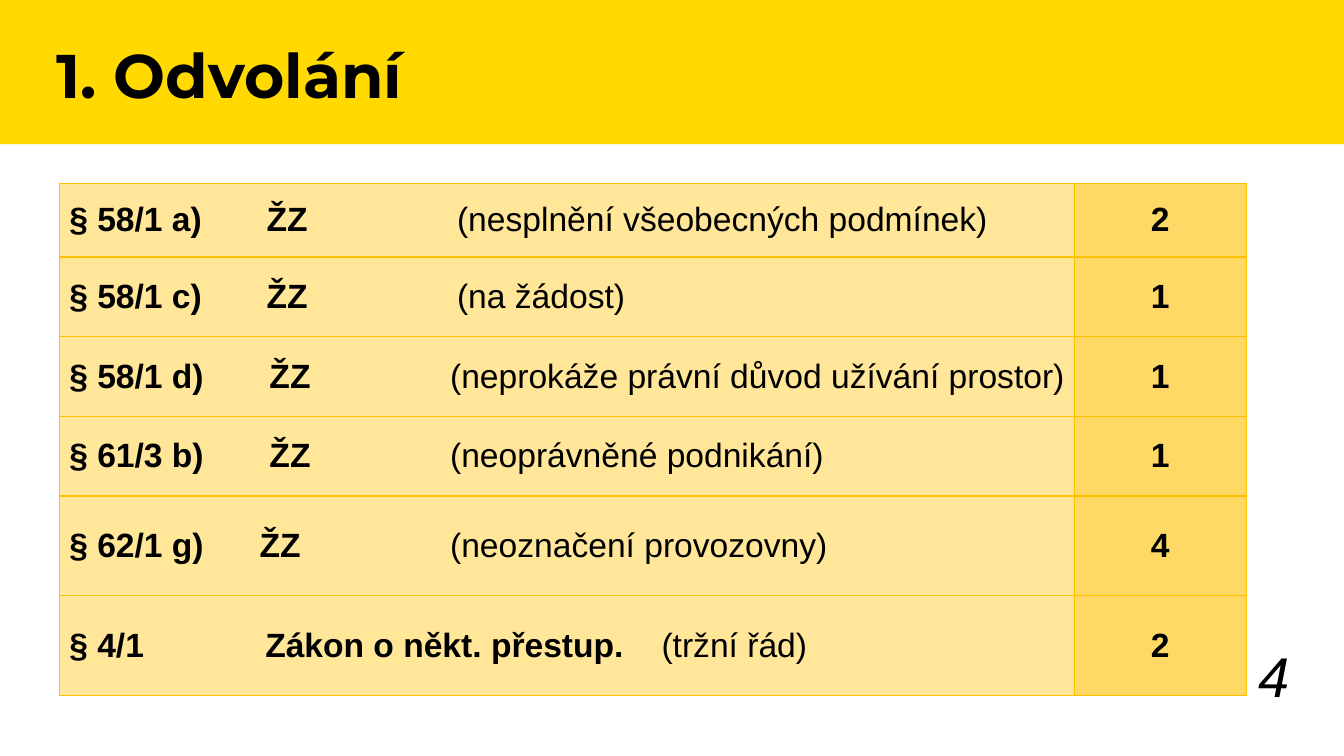
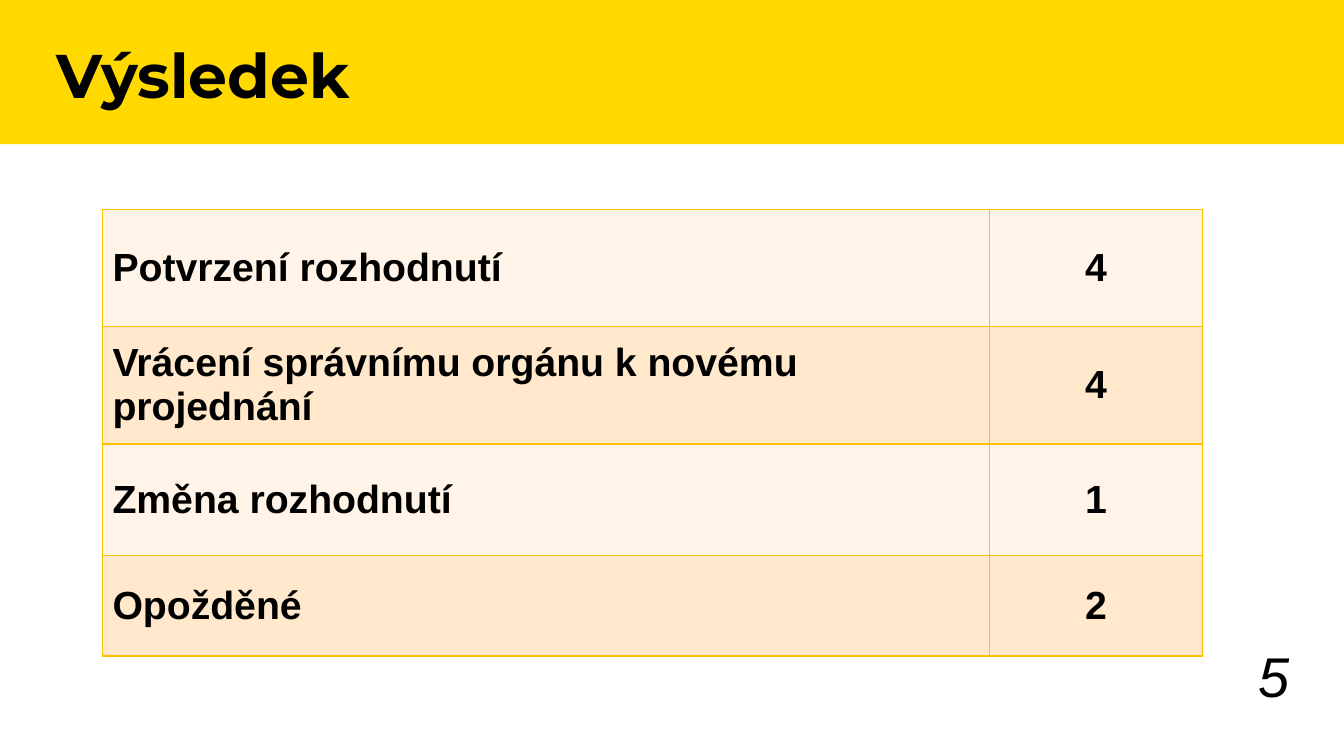
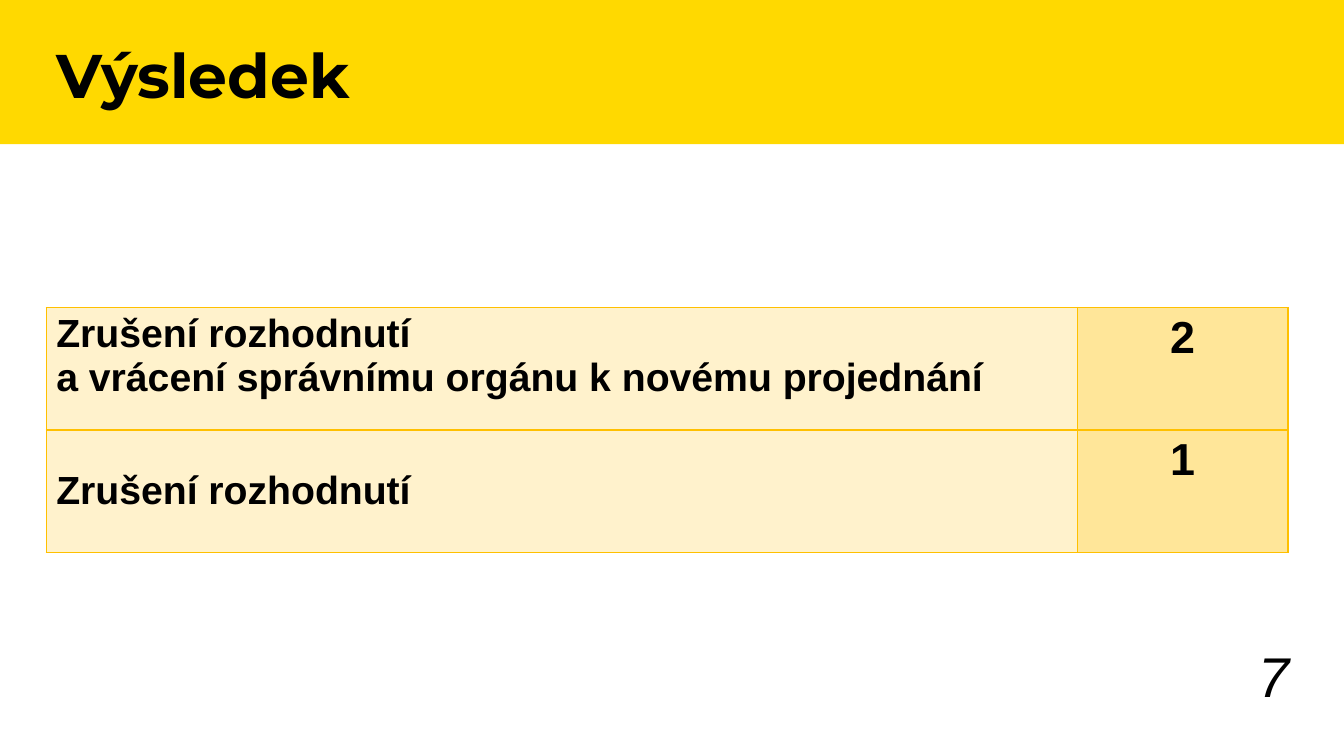
from dataclasses import dataclass

from lxml.etree import SubElement as Sub
from pptx import Presentation
from pptx.dml.color import RGBColor as RGB
from pptx.enum.shapes import MSO_SHAPE as Shape
from pptx.enum.text import MSO_ANCHOR as Anchor, MSO_AUTO_SIZE as Fit, PP_ALIGN as Align
from pptx.oxml import parse_xml
from pptx.oxml.ns import nsdecls, qn
from pptx.util import Pt


@dataclass(frozen=True)
class Theme:
    wide: float = 960
    high: float = 540
    band: float = 103
    gold: str = "FFD900"
    rule: str = "FFC000"
    ink: str = "000000"
    head: str = "Montserrat"
    body: str = "Arial"
    title: int = 44
    page: int = 40
    big: int = 32
    mid: int = 28
    small: int = 24


T = Theme()
PALE, SAND, AMBER = "FFF2CC", "FFE699", "FFD966"
CREAM, PEACH = "FFF4E7", "FFE8CC"


def style(par, size, face=T.body, bold=True, italic=False):
    font = par.font
    font.name, font.size, font.bold, font.italic = face, Pt(size), bold, italic
    font.color.rgb = RGB.from_string(T.ink)


def place(shape, box):
    shape.left, shape.top, shape.width, shape.height = map(Pt, box)


def add_band(slide):
    """Draw the top band and hand it to the layout, behind its title."""
    band = slide.shapes.add_shape(Shape.RECTANGLE, 0, 0, Pt(T.wide), Pt(T.band))
    band.shadow.inherit = False
    band.fill.solid()
    band.fill.fore_color.rgb = RGB.from_string(T.gold)
    band.line.fill.background()
    slide.slide_layout.element.cSld.spTree.insert(2, band.element)


def add_title(slide, text, box):
    title = slide.shapes.title
    place(title, box)
    frame = title.text_frame
    frame.text = text
    frame.auto_size, frame.vertical_anchor = Fit.NONE, Anchor.TOP
    par = frame.paragraphs[0]
    par.alignment, par.line_spacing = Align.LEFT, 0.9
    style(par, T.title, T.head)


def add_page(slide, page, box):
    frame = slide.shapes.add_textbox(*map(Pt, box)).text_frame
    frame.word_wrap, frame.vertical_anchor = True, Anchor.BOTTOM
    par = frame.paragraphs[0]
    par.text, par.alignment = str(page), Align.RIGHT
    style(par, T.page, bold=False, italic=True)


def add_edges(cell):
    props = cell._tc.get_or_add_tcPr()
    for spot, side in enumerate("LRTB"):
        props.insert(spot, parse_xml(
            f'<a:ln{side} {nsdecls("a")} w="{Pt(1)}"><a:solidFill>'
            f'<a:srgbClr val="{T.rule}"/></a:solidFill></a:ln{side}>'))


def add_tabs(par, stops):
    tabs = Sub(par._p.get_or_add_pPr(), qn("a:tabLst"))
    for stop in stops:
        Sub(tabs, qn("a:tab"), pos=str(Pt(stop)), algn="l")


def fill_cell(cell, text, size, fill, align=Align.LEFT, anchor=Anchor.MIDDLE, stops=()):
    """Write one paragraph per line; a part in brackets is set light."""
    cell.fill.solid()
    cell.fill.fore_color.rgb = RGB.from_string(fill)
    add_edges(cell)
    cell.vertical_anchor = anchor
    cell.margin_right = Pt(1) if stops else Pt(7.2)
    frame = cell.text_frame
    for num, line in enumerate(text.split("\n")):
        par = frame.add_paragraph() if num else frame.paragraphs[0]
        par.alignment = align
        if stops:
            add_tabs(par, stops)
        style(par, size)
        lead, mark, note = line.partition("(")
        par.add_run().text = lead
        if mark:
            run = par.add_run()
            run.text, run.font.bold = mark + note, False


def add_grid(slide, spot, cols, rows):
    """Make an empty table from column widths and row heights."""
    table = slide.shapes.add_table(
        len(rows), len(cols), *map(Pt, (*spot, sum(cols), sum(rows)))).table
    table.first_row = table.horz_banding = False
    for col, width in zip(table.columns, cols):
        col.width = Pt(width)
    for row, height in zip(table.rows, rows):
        row.height = Pt(height)
    return table


def add_appeals(slide, spot):
    items = [
        ("§ 58/1 a)\tŽZ\t(nesplnění všeobecných podmínek)", 2, (141, 277)),
        ("§ 58/1 c)\tŽZ\t(na žádost)", 1, (141, 277)),
        ("§ 58/1 d)\tŽZ\t(neprokáže právní důvod užívání prostor)", 1, (143, 272)),
        ("§ 61/3 b)\tŽZ\t(neoprávněné podnikání)", 1, (143, 272)),
        ("§ 62/1 g)\tŽZ\t(neoznačení provozovny)", 4, (136, 272)),
        ("§ 4/1\tZákon o někt. přestup.\t(tržní řád)", 2, (140, 423)),
    ]
    table = add_grid(slide, spot, (725, 123), [52.6] + [56.9] * 3 + [71.2] * 2)
    for row, (text, count, stops) in zip(table.rows, items):
        left, right = row.cells
        fill_cell(left, text, T.small, SAND, stops=stops)
        fill_cell(right, str(count), T.small, AMBER, Align.CENTER)


def add_results(slide, spot):
    items = [
        ("Potvrzení rozhodnutí", 4),
        ("Vrácení správnímu orgánu k novému projednání", 4),
        ("Změna rozhodnutí", 1),
        ("Opožděné", 2),
    ]
    table = add_grid(slide, spot, (633.5, 152.5), (83.5, 84, 79.5, 72))
    for num, (text, count) in enumerate(items):
        fill = PEACH if num % 2 else CREAM
        fill_cell(table.cell(num, 0), text, T.mid, fill)
        fill_cell(table.cell(num, 1), str(count), T.mid, fill, Align.CENTER)


def add_repeals(slide, spot):
    items = [
        ("Zrušení rozhodnutí\na vrácení správnímu orgánu k novému projednání", 2, Anchor.TOP),
        ("Zrušení rozhodnutí", 1, Anchor.MIDDLE),
    ]
    table = add_grid(slide, spot, (736.5, 150.5), (87.5, 87.5))
    for row, (text, count, anchor) in zip(table.rows, items):
        left, right = row.cells
        fill_cell(left, text, T.mid, PALE, anchor=anchor)
        fill_cell(right, str(count), T.big, SAND, Align.CENTER, Anchor.TOP)


def main():
    deck = Presentation()
    deck.slide_width, deck.slide_height = Pt(T.wide), Pt(T.high)
    layout = deck.slide_layouts[5]
    pages = [
        ("1. Odvolání", 4, add_appeals, (42.3, 131)),
        ("Výsledek", 5, add_results, (73.2, 149.6)),
        ("Výsledek", 7, add_repeals, (33, 219.6)),
    ]
    for num, (title, page, draw, spot) in enumerate(pages):
        slide = deck.slides.add_slide(layout)
        if num == 0:
            add_band(slide)
        add_title(slide, title, (33, 28.8, 887, 73.4))
        draw(slide, spot)
        add_page(slide, page, (712, 468.7, 216, 41))
    deck.save("out.pptx")


if __name__ == "__main__":
    main()
